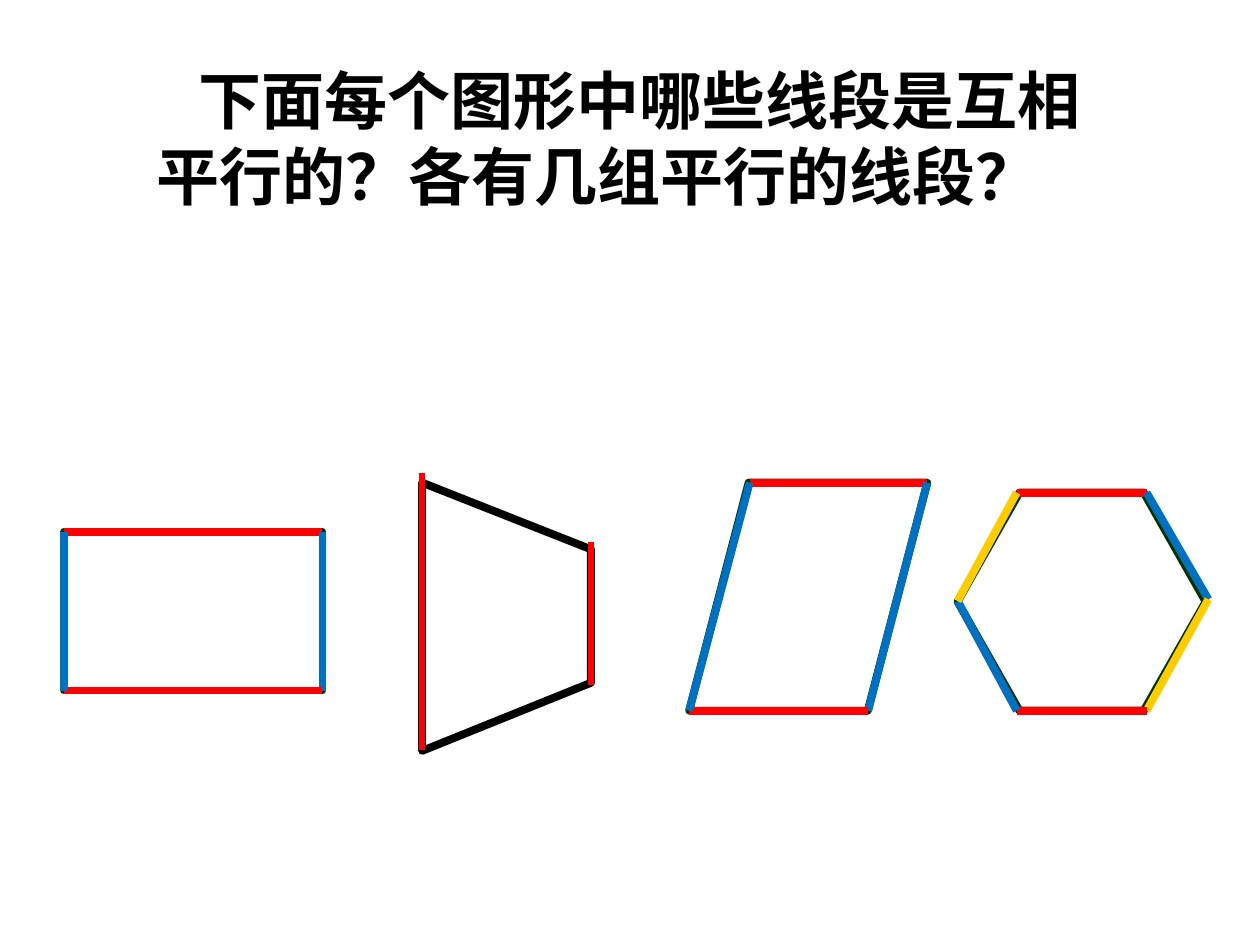
from dataclasses import dataclass

from lxml import etree
from pptx import Presentation
from pptx.dml.color import RGBColor
from pptx.enum import shapes, text
from pptx.oxml import ns
from pptx.util import Pt

Point = tuple[float, float]


@dataclass(frozen=True)
class Theme:
    font: str = "Calibri"
    title_size: float = 36
    ink: str = "000000"
    outline: str = "003300"
    paper: str = "FFFFFF"
    red: str = "FF0000"
    blue: str = "0070C0"
    yellow: str = "FFCC00"
    thick: float = 4.5
    thin: float = 3


THEME = Theme()


@dataclass(frozen=True)
class Outline:
    kind: shapes.MSO_SHAPE
    left: float
    top: float
    width: float
    height: float
    adjustments: tuple[float, ...] = ()


@dataclass(frozen=True)
class Segment:
    start: Point
    end: Point
    color: str
    width: float = THEME.thick


OUTLINES = [
    Outline(shapes.MSO_SHAPE.RECTANGLE, 36.7, 303.8, 147.6, 90.8),
    Outline(shapes.MSO_SHAPE.PARALLELOGRAM, 393.8, 275.8, 136.1, 130.3, (0.261,)),
    Outline(shapes.MSO_SHAPE.HEXAGON, 547.2, 281.5, 141.8, 124.6, (0.284, 1.155)),
]
TRAPEZOID: list[Point] = [(241.2, 429.1), (337.7, 390.2), (337.7, 313.9), (241.2, 275.8)]

# Corners run clockwise from the top left; each side takes the matching colour.
SIDES = [
    ([(36.7, 303.8), (184.3, 303.8), (184.3, 394.6), (36.7, 394.6)],
     [THEME.red, THEME.blue] * 2),
    ([(428.4, 275.8), (529.9, 275.8), (496.1, 406.1), (393.8, 406.1)],
     [THEME.red, THEME.blue] * 2),
    ([(581, 281.5), (655.2, 281.5), (690.5, 342.5),
      (655.2, 406.1), (581, 406.1), (547.2, 343.5)],
     [THEME.red, THEME.blue, THEME.yellow] * 2),
]
TRAPEZOID_SIDES = [
    Segment((241.2, 270), (241.2, 428.4), THEME.red, THEME.thin),
    Segment((337.7, 309.6), (337.7, 391.7), THEME.red, THEME.thin),
]


def set_line(shape, color: str, width: float) -> None:
    shape.line.color.rgb = RGBColor.from_string(color)
    shape.line.width = Pt(width)


def add_outline(page, outline: Outline) -> None:
    shape = page.shapes.add_shape(
        outline.kind, Pt(outline.left), Pt(outline.top), Pt(outline.width), Pt(outline.height))
    for index, value in enumerate(outline.adjustments):
        shape.adjustments[index] = value
    shape.fill.background()
    shape.shadow.inherit = False
    set_line(shape, THEME.outline, THEME.thick)


def add_trapezoid(page, corners: list[Point]) -> None:
    first, *rest = [(Pt(x), Pt(y)) for x, y in corners]
    builder = page.shapes.build_freeform(*first)
    builder.add_line_segments(rest, close=True)
    shape = builder.convert_to_shape()
    shape.shadow.inherit = False
    shape.fill.solid()
    shape.fill.fore_color.rgb = RGBColor.from_string(THEME.paper)
    color = shape.fill._xPr.find(".//" + ns.qn("a:srgbClr"))
    etree.SubElement(color, ns.qn("a:alpha"), val="11000")
    set_line(shape, THEME.ink, THEME.thick)


def add_segment(page, segment: Segment) -> None:
    line = page.shapes.add_connector(
        shapes.MSO_CONNECTOR.STRAIGHT, *(Pt(v) for v in segment.start + segment.end))
    set_line(line, segment.color, segment.width)
    etree.SubElement(line._element.spPr, ns.qn("a:effectLst"))


def add_question(page, wording: str) -> None:
    box = page.shapes.add_textbox(Pt(82.1), Pt(31.7), Pt(564.5), Pt(138.2))
    frame_format = {
        "word_wrap": True,
        "auto_size": text.MSO_AUTO_SIZE.NONE,
        "vertical_anchor": text.MSO_ANCHOR.TOP,
    }
    for name, value in frame_format.items():
        setattr(box.text_frame, name, value)
    para = box.text_frame.paragraphs[0]
    para._p.get_or_add_pPr().set("indent", str(Pt(24.4)))
    span = para.add_run()
    span.text = wording
    font_format = {"name": THEME.font, "size": Pt(THEME.title_size), "bold": True}
    for name, value in font_format.items():
        setattr(span.font, name, value)
    span.font.color.rgb = RGBColor.from_string(THEME.ink)
    etree.SubElement(span.font._element, ns.qn("a:ea"), typeface=THEME.font)


def main() -> None:
    deck = Presentation()
    deck.slide_width, deck.slide_height = Pt(720), Pt(540)
    page = deck.slides.add_slide(deck.slide_layouts[6])
    for outline in OUTLINES:
        add_outline(page, outline)
    add_trapezoid(page, TRAPEZOID)
    for corners, colors in SIDES:
        for start, end, color in zip(corners, corners[1:] + corners[:1], colors):
            add_segment(page, Segment(start, end, color))
    for segment in TRAPEZOID_SIDES:
        add_segment(page, segment)
    add_question(page, "下面每个图形中哪些线段是互相平行的？各有几组平行的线段？")
    deck.save("out.pptx")


if __name__ == "__main__":
    main()
